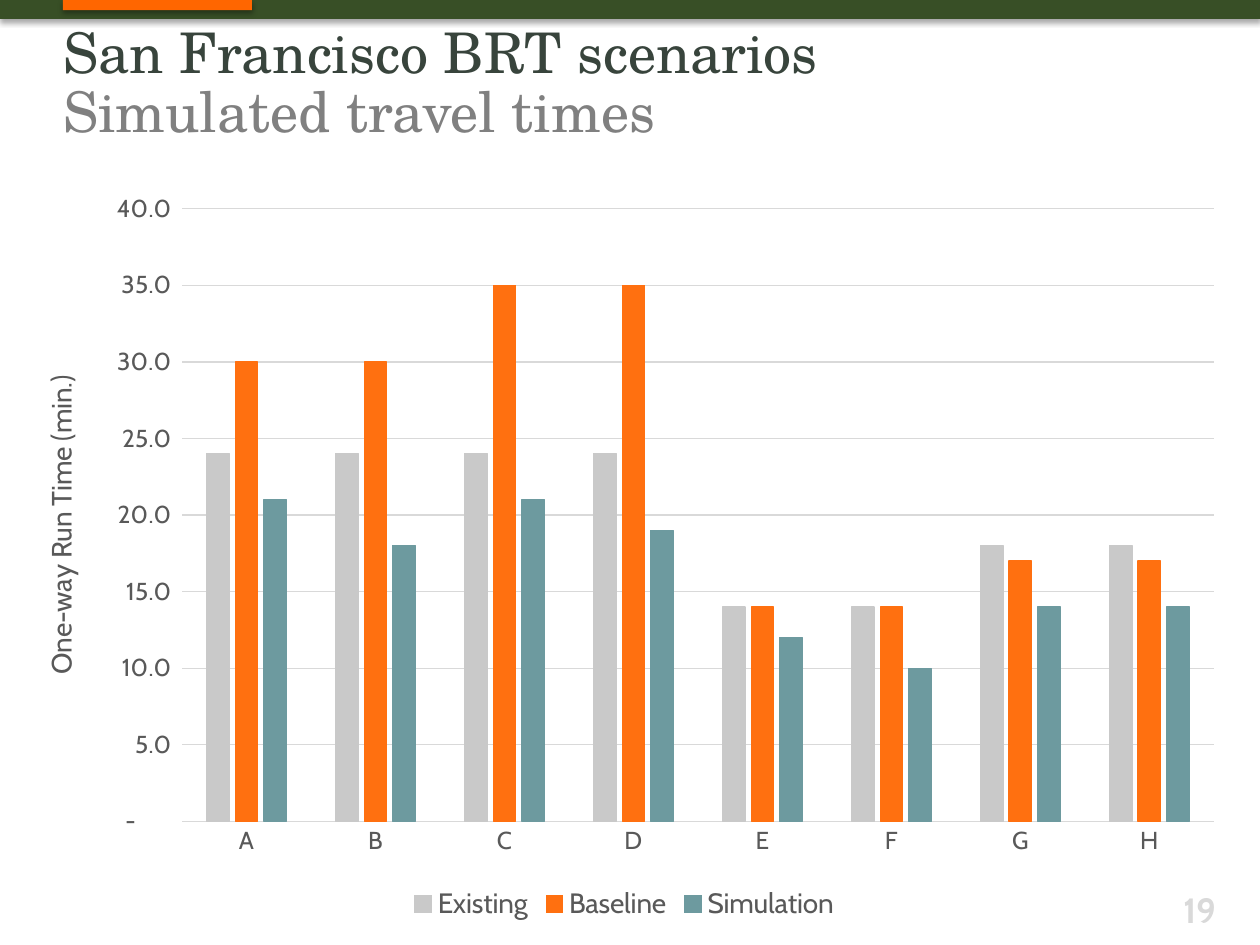
import dataclasses
import pptx
import pptx.chart.data
import pptx.dml.color
import pptx.enum.chart
import pptx.enum.shapes
import pptx.enum.text
import pptx.oxml
import pptx.oxml.ns
import pptx.util

Inches = pptx.util.Inches
Pt = pptx.util.Pt
ALIGN = pptx.enum.text.PP_ALIGN
ANCHOR = pptx.enum.text.MSO_ANCHOR
SERIF, SANS = "TeX Gyre Schola", "Cabin"
INK, RULE = "595959", "D9D9D9"
FORMAT = r'_(* #,##0.0_);_(* \(#,##0.0\);_(* "-"??_);_(@_)'


@dataclasses.dataclass
class Bar:
    left: float
    width: float
    height: float
    color: str


@dataclasses.dataclass
class Series:
    name: str
    color: str
    values: list[int]


BARS = [Bar(0, 10, 0.15, "384F26"), Bar(0.5, 1.5, 0.08, "FF6600")]
SERIES = [
    Series("Existing", "C9C9C9", [24, 24, 24, 24, 14, 14, 18, 18]),
    Series("Baseline", "FF7010", [30, 30, 35, 35, 14, 14, 17, 17]),
    Series("Simulation", "6D9A9F", [21, 18, 21, 19, 12, 10, 14, 14]),
]


def rgb(code: str):
    return pptx.dml.color.RGBColor.from_string(code)


def style(font, size: float, color: str, name: str = SANS, bold: bool = False) -> None:
    font.size, font.name, font.bold = Pt(size), name, bold
    font.color.rgb = rgb(color)


def rule(line, color: str) -> None:
    line.color.rgb = rgb(color)
    line.width = Pt(0.75)


def shade(shape) -> None:
    """Give the shape a soft shadow straight below it."""
    shape.shadow.inherit = False
    effects = shape._element.spPr.find(pptx.oxml.ns.qn("a:effectLst"))
    effects.append(pptx.oxml.parse_xml(
        f'<a:outerShdw {pptx.oxml.ns.nsdecls("a")} blurRad="{Pt(3.1)}" '
        f'dist="{Pt(1.8)}" dir="5400000" rotWithShape="0">'
        '<a:srgbClr val="000000"><a:alpha val="35000"/></a:srgbClr></a:outerShdw>'))


def add_bar(slide, bar: Bar) -> None:
    shape = slide.shapes.add_shape(
        pptx.enum.shapes.MSO_SHAPE.RECTANGLE,
        Inches(bar.left), 0, Inches(bar.width), Inches(bar.height))
    shape.fill.solid()
    shape.fill.fore_color.rgb = rgb(bar.color)
    shape.line.fill.background()
    shade(shape)


def add_title(slide) -> None:
    title = slide.shapes.title
    title.left, title.top = Inches(0.5), Inches(0.2)
    title.width, title.height = Inches(8.08), Inches(0.88)
    frame = title.text_frame
    frame.margin_left = frame.margin_right = frame.margin_top = frame.margin_bottom = 0
    frame.auto_size = pptx.enum.text.MSO_AUTO_SIZE.NONE
    frame.vertical_anchor = ANCHOR.TOP
    para = frame.paragraphs[0]
    para.alignment, para.line_spacing = ALIGN.LEFT, Pt(34)
    lines = [("San Francisco BRT scenarios", "38443C"),
             ("Simulated travel times", "808080")]
    for index, (text, color) in enumerate(lines):
        if index:
            para.add_line_break()
        run = para.add_run()
        run.text = text
        style(run.font, 32, color, SERIF)


def add_number(slide) -> None:
    box = slide.shapes.add_textbox(Inches(8.83), Inches(7), Inches(0.92), Inches(0.35))
    frame = box.text_frame
    frame.word_wrap = True
    frame.vertical_anchor = ANCHOR.TOP
    para = frame.paragraphs[0]
    para.alignment = ALIGN.RIGHT
    run = para.add_run()
    run.text = "19"
    style(run.font, 20, RULE, bold=True)


def set_plot(chart, x: float, y: float, w: float, h: float) -> None:
    """Fix the inner plot area, as fractions of the chart."""
    area = chart._chartSpace.chart.plotArea
    for old in area.findall(pptx.oxml.ns.qn("c:layout")):
        area.remove(old)
    area.insert(0, pptx.oxml.parse_xml(
        f'<c:layout {pptx.oxml.ns.nsdecls("c")}><c:manualLayout>'
        '<c:layoutTarget val="inner"/><c:xMode val="edge"/><c:yMode val="edge"/>'
        f'<c:x val="{x}"/><c:y val="{y}"/><c:w val="{w}"/><c:h val="{h}"/>'
        '</c:manualLayout></c:layout>'))


def add_chart(slide) -> None:
    kinds = pptx.enum.chart
    data = pptx.chart.data.CategoryChartData(number_format=FORMAT)
    data.categories = list("ABCDEFGH")
    for item in SERIES:
        data.add_series(item.name, item.values)
    chart = slide.shapes.add_chart(
        kinds.XL_CHART_TYPE.COLUMN_CLUSTERED,
        Inches(0.08), Inches(1.42), Inches(9.75), Inches(5.93), data).chart
    style(chart.font, 10, "000000")
    chart.has_title = False
    chart.has_legend = True
    chart.legend.position = kinds.XL_LEGEND_POSITION.BOTTOM
    chart.legend.include_in_layout = False
    style(chart.legend.font, 16, INK)

    plot = chart.plots[0]
    plot.gap_width, plot.overlap, plot.vary_by_categories = 219, -27, False
    for series, item in zip(plot.series, SERIES):
        series.format.fill.solid()
        series.format.fill.fore_color.rgb = rgb(item.color)
        rule(series.format.line, item.color)

    for axis in (chart.category_axis, chart.value_axis):
        axis.major_tick_mark = axis.minor_tick_mark = kinds.XL_TICK_MARK.NONE
        style(axis.tick_labels.font, 14, INK)
    rule(chart.category_axis.format.line, RULE)

    scale = chart.value_axis
    scale.minimum_scale, scale.maximum_scale, scale.major_unit = 0, 40, 5
    scale.format.line.fill.background()
    rule(scale.major_gridlines.format.line, RULE)
    scale.tick_labels.number_format = FORMAT
    scale.tick_labels.number_format_is_linked = False
    run = scale.axis_title.text_frame.paragraphs[0].add_run()
    run.text = "One-way Run Time (min.)"
    style(run.font, 16, INK)
    set_plot(chart, 0.14, 0.04, 0.84, 0.82)


def main() -> None:
    deck = pptx.Presentation()
    deck.slide_width, deck.slide_height = Inches(10), Inches(7.5)
    slide = deck.slides.add_slide(deck.slide_layouts[5])
    for bar in BARS:
        add_bar(slide, bar)
    add_title(slide)
    add_number(slide)
    add_chart(slide)
    deck.save("out.pptx")


if __name__ == "__main__":
    main()
